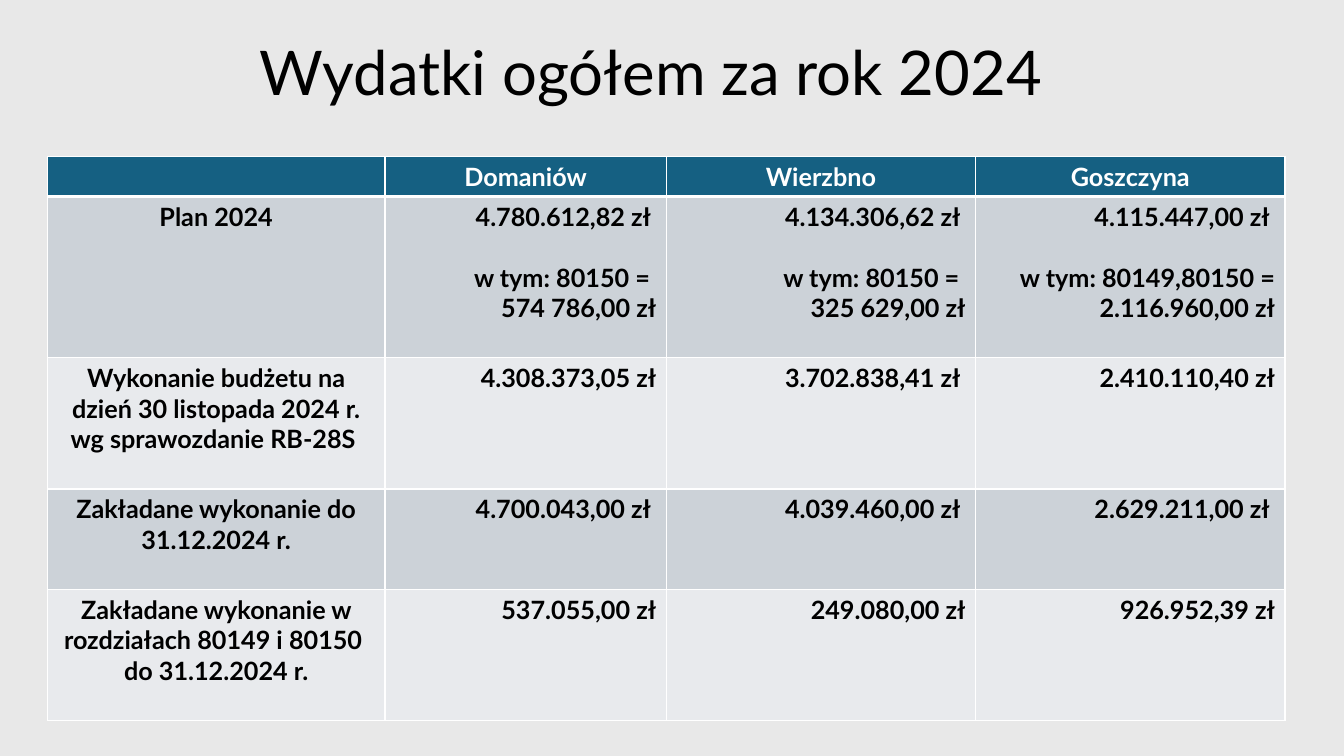
"""Build the slide with total expenditure for 2024 by school."""

from dataclasses import dataclass

from lxml import etree
from pptx import Presentation
from pptx.dml.color import RGBColor
from pptx.enum.text import MSO_ANCHOR, PP_ALIGN
from pptx.oxml.ns import qn
from pptx.util import Pt

CENTER = PP_ALIGN.CENTER
RIGHT = PP_ALIGN.RIGHT
MIDDLE = MSO_ANCHOR.MIDDLE

FONT = "Lato"
BLACK = "000000"
WHITE = "FFFFFF"
BACKGROUND = "E8E8E8"
HEADER_FILL = "156082"
BAND_FILLS = ("CCD2D8", "E8EAED")
COLUMN_WIDTHS = (241.2, 200.9, 221, 221)
BODY_SIZE = 18
LINE_HEIGHT = 21.6
HAIRLINE = 1
HEADER_RULE = 3


@dataclass(frozen=True)
class Row:
    height: float
    label: str
    amounts: tuple[str, str, str]
    detail_gap: float = 0


ROWS = (
    Row(28.8, "", ("Domaniów", "Wierzbno", "Goszczyna")),
    Row(
        115.2,
        "Plan 2024",
        (
            "4.780.612,82 zł \nw tym: 80150 = \n574 786,00 zł",
            "4.134.306,62 zł \nw tym: 80150 = \n325 629,00 zł",
            "4.115.447,00 zł \nw tym: 80149,80150 = 2.116.960,00 zł",
        ),
        LINE_HEIGHT,
    ),
    Row(
        93.6,
        "Wykonanie budżetu na dzień 30 listopada 2024 r. wg sprawozdanie RB-28S ",
        ("4.308.373,05 zł", "3.702.838,41 zł ", "2.410.110,40 zł"),
    ),
    Row(
        72,
        "Zakładane wykonanie do 31.12.2024 r.",
        ("4.700.043,00 zł ", "4.039.460,00 zł ", "2.629.211,00 zł "),
    ),
    Row(
        93.6,
        "Zakładane wykonanie w rozdziałach 80149 i 80150 \ndo 31.12.2024 r.",
        ("537.055,00 zł", "249.080,00 zł", "926.952,39 zł"),
    ),
)


def color(value: str) -> RGBColor:
    """Turn a hex string into a colour."""
    return RGBColor.from_string(value)


def format_text(text_frame, size: float, hex_color: str, alignment, bold: bool) -> None:
    """Format every paragraph and run of a text frame."""
    for paragraph in text_frame.paragraphs:
        paragraph.alignment = alignment
        for run in paragraph.runs:
            run.font.name = FONT
            run.font.size = Pt(size)
            run.font.bold = bold
            run.font.color.rgb = color(hex_color)


def set_borders(cell, top: float, bottom: float) -> None:
    """Draw white borders on the four sides of a cell."""
    properties = cell._tc.get_or_add_tcPr()
    sides = (("a:lnL", HAIRLINE), ("a:lnR", HAIRLINE), ("a:lnT", top), ("a:lnB", bottom))
    for position, (tag, width) in enumerate(sides):
        line = etree.Element(qn(tag), w=str(Pt(width)))
        fill = etree.SubElement(line, qn("a:solidFill"))
        etree.SubElement(fill, qn("a:srgbClr"), val=WHITE)
        properties.insert(position, line)


def add_title(slide, text: str) -> None:
    """Add the centred slide title."""
    shape = slide.shapes.add_textbox(Pt(48.2), Pt(14.4), Pt(845.3), Pt(78.5))
    text_frame = shape.text_frame
    text_frame.word_wrap = True
    text_frame.vertical_anchor = MIDDLE
    text_frame.text = text
    format_text(text_frame, 44, BLACK, CENTER, False)
    text_frame.paragraphs[0].line_spacing = 0.9


def fill_cell(cell, text: str, row_index: int, column_index: int, detail_gap: float) -> None:
    """Write and style one table cell."""
    is_header = row_index == 0
    cell.fill.solid()
    cell.fill.fore_color.rgb = color(HEADER_FILL if is_header else BAND_FILLS[(row_index - 1) % 2])
    set_borders(
        cell,
        HEADER_RULE if row_index == 1 else HAIRLINE,
        HEADER_RULE if is_header else HAIRLINE,
    )
    cell.text_frame.text = text
    alignment = CENTER if is_header or column_index == 0 else RIGHT
    format_text(cell.text_frame, BODY_SIZE, WHITE if is_header else BLACK, alignment, True)
    for paragraph in cell.text_frame.paragraphs[1:2]:
        paragraph.space_before = Pt(detail_gap)


def add_expense_table(slide, rows: tuple[Row, ...]) -> None:
    """Add the table of planned and actual expenditure."""
    table = slide.shapes.add_table(
        len(rows),
        len(COLUMN_WIDTHS),
        Pt(33.8),
        Pt(111.6),
        Pt(sum(COLUMN_WIDTHS)),
        Pt(sum(row.height for row in rows)),
    ).table
    table.horz_banding = False
    for column, width in zip(table.columns, COLUMN_WIDTHS):
        column.width = Pt(width)
    for row_index, row in enumerate(rows):
        table.rows[row_index].height = Pt(row.height)
        for column_index, text in enumerate((row.label, *row.amounts)):
            cell = table.cell(row_index, column_index)
            fill_cell(cell, text, row_index, column_index, row.detail_gap)


def main() -> None:
    """Create and save the presentation."""
    presentation = Presentation()
    presentation.slide_width = Pt(960)
    presentation.slide_height = Pt(540)
    slide = presentation.slides.add_slide(presentation.slide_layouts[6])
    slide.background.fill.solid()
    slide.background.fill.fore_color.rgb = color(BACKGROUND)
    add_title(slide, "Wydatki ogółem za rok 2024 ")
    add_expense_table(slide, ROWS)
    presentation.save("out.pptx")


if __name__ == "__main__":
    main()
